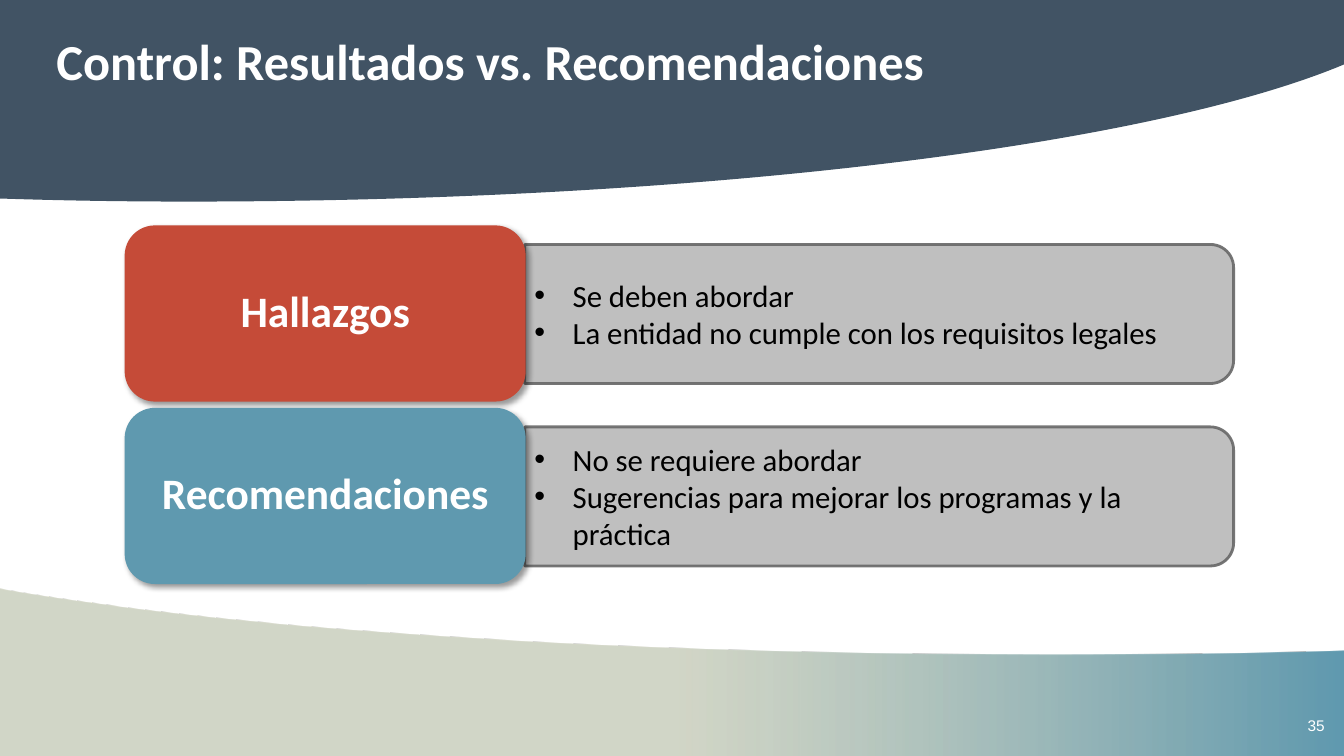
from lxml import etree
from pptx import Presentation
from pptx.dml.color import RGBColor
from pptx.enum.shapes import MSO_SHAPE
from pptx.enum.text import MSO_ANCHOR, MSO_AUTO_SIZE, PP_ALIGN
from pptx.oxml.ns import qn
from pptx.util import Inches, Pt

ROUNDED = MSO_SHAPE.ROUNDED_RECTANGLE
ROUND_TOP = MSO_SHAPE.ROUND_2_SAME_RECTANGLE
TOP = MSO_ANCHOR.TOP
MIDDLE = MSO_ANCHOR.MIDDLE
NO_FIT = MSO_AUTO_SIZE.NONE
LEFT = PP_ALIGN.LEFT
CENTER = PP_ALIGN.CENTER

COLORS = {
    "navy": "415364",
    "sage": "B7BDA4",
    "teal": "5F99AF",
    "red": "C54B38",
    "gray": "676767",
    "black": "000000",
    "white": "FFFFFF",
}
RGB = {name: RGBColor.from_string(value) for name, value in COLORS.items()}

TOP_WAVE = [
    [(0.6, 1.99), (1.23, 2), (1.86, 2)],
    [(7, 2), (11.42, 1.44), (13.33, 0.64)],
]
BOTTOM_WAVE = [
    [(0.61, 5.95), (1.33, 6.04), (2.16, 6.13)],
    [(4.36, 6.35), (7.25, 6.49), (10.41, 6.49)],
    [(11.42, 6.49), (12.4, 6.48), (13.33, 6.45)],
]

ROWS = [
    ("Hallazgos", "red",
     ["Se deben abordar", "La entidad no cumple con los requisitos legales"]),
    ("Recomendaciones", "teal",
     ["No se requiere abordar", "Sugerencias para mejorar los programas y la práctica"]),
]
FIRST_TOP = 2.25
ROW_PITCH = 1.81


def add_wave(page, edge, start, curves):
    corners = [(0, start)] + [curve[-1] for curve in curves] + [(13.33, edge)]
    builder = page.shapes.build_freeform(0, Inches(edge), scale=1.0)
    builder.add_line_segments([(Inches(x), Inches(y)) for x, y in corners], close=True)
    wave = builder.convert_to_shape()
    segments = list(wave.element.iter(qn("a:lnTo")))
    for segment, curve in zip(segments[1:], curves):
        segment.tag = qn("a:cubicBezTo")
        for position, (x, y) in enumerate(curve[:2]):
            control = etree.Element(
                qn("a:pt"), x=str(Inches(x) - wave.left), y=str(Inches(y) - wave.top))
            segment.insert(position, control)
    wave.shadow.inherit = False
    wave.line.fill.background()
    return wave


def set_alpha(parent, percent):
    for color in parent.iter(qn("a:srgbClr")):
        etree.SubElement(color, qn("a:alpha"), val=str(percent * 1000))


deck = Presentation()
deck.slide_width = Inches(13.33)
deck.slide_height = Inches(7.5)
page = deck.slides.add_slide(deck.slide_layouts[3])
title, *lists = page.placeholders
tree = title.element.getparent()

header = add_wave(page, 0, 1.97, TOP_WAVE)
header.fill.solid()
header.fill.fore_color.rgb = RGB["navy"]

footer = add_wave(page, 7.51, 5.84, BOTTOM_WAVE)
footer.fill.gradient()
footer.fill.gradient_angle = 0
for stop, position, name in zip(footer.fill.gradient_stops, (0.5, 1), ("sage", "teal")):
    stop.position = position
    stop.color.rgb = RGB[name]
set_alpha(footer.element.find(".//" + qn("a:gs")), 61)

number = page.shapes.add_textbox(Inches(12.87), Inches(7.06), Inches(0.39), Inches(0.29))
number.text_frame.text = "35"
number_font = number.text_frame.paragraphs[0].runs[0].font
number_font.name = "Arial"
number_font.size = Pt(11)
number_font.color.rgb = RGB["white"]

tree.append(title.element)
title.left, title.top, title.width, title.height = map(Inches, (0.46, 0.25, 12, 0.75))
title.text_frame.text = "Control: Resultados vs. Recomendaciones"
title.text_frame.auto_size = NO_FIT
title.text_frame.vertical_anchor = TOP
title.text_frame.paragraphs[0].alignment = LEFT
title_font = title.text_frame.paragraphs[0].runs[0].font
title_font.name = "Calibri"
title_font.size = Pt(36)
title_font.bold = True
title_font.color.rgb = RGB["white"]

for index, (label, color, points) in enumerate(ROWS):
    top = FIRST_TOP + index * ROW_PITCH

    panel = page.shapes.add_shape(
        ROUND_TOP, Inches(8.03), Inches(top - 2.65), Inches(1.38), Inches(7.03))
    panel.rotation = 90
    panel.shadow.inherit = False
    panel.fill.solid()
    panel.fill.fore_color.rgb = RGB["black"]
    panel.line.color.rgb = RGB["gray"]
    panel.line.width = Pt(2)
    properties = panel.element.spPr
    set_alpha(properties.find(qn("a:solidFill")), 25)
    set_alpha(properties.find(qn("a:ln")), 90)

    box = lists[index]
    tree.append(box.element)
    box.left, box.top, box.width, box.height = map(Inches, (5.21, top + 0.24, 6.96, 1.24))
    frame = box.text_frame
    frame.text = "\n".join(points)
    frame.auto_size = NO_FIT
    frame.vertical_anchor = MIDDLE
    frame.margin_left = frame.margin_right = Inches(0.09)
    for para in frame.paragraphs:
        para.space_before = Pt(0)
        settings = para._p.get_or_add_pPr()
        settings.set("marL", str(Inches(0.38)))
        settings.set("indent", str(Inches(-0.38)))
        etree.SubElement(settings, qn("a:buFont"), typeface="Arial")
        etree.SubElement(settings, qn("a:buChar"), char="•")
        span = para.runs[0]
        span.font.name = "Calibri"
        span.font.size = Pt(22)
        span.font.color.rgb = RGB["black"]

    card = page.shapes.add_shape(
        ROUNDED, Inches(1.25), Inches(top), Inches(3.95), Inches(1.72))
    card.fill.solid()
    card.fill.fore_color.rgb = RGB[color]
    card.line.color.rgb = RGB[color]
    card.line.width = Pt(2)
    card.shadow.inherit = False
    shadow = etree.SubElement(
        card.element.spPr.find(qn("a:effectLst")), qn("a:outerShdw"),
        blurRad=str(Pt(4)), dist=str(Pt(3)), dir="2700000", rotWithShape="0")
    etree.SubElement(shadow, qn("a:srgbClr"), val=COLORS["black"])
    set_alpha(shadow, 40)
    card.text_frame.text = label
    card.text_frame.word_wrap = True
    card.text_frame.vertical_anchor = MIDDLE
    para = card.text_frame.paragraphs[0]
    para.alignment = CENTER
    para.line_spacing = 0.9
    span = para.runs[0]
    span.font.name = "Calibri"
    span.font.size = Pt(31)
    span.font.bold = True
    span.font.color.rgb = RGB["white"]

deck.save("out.pptx")
